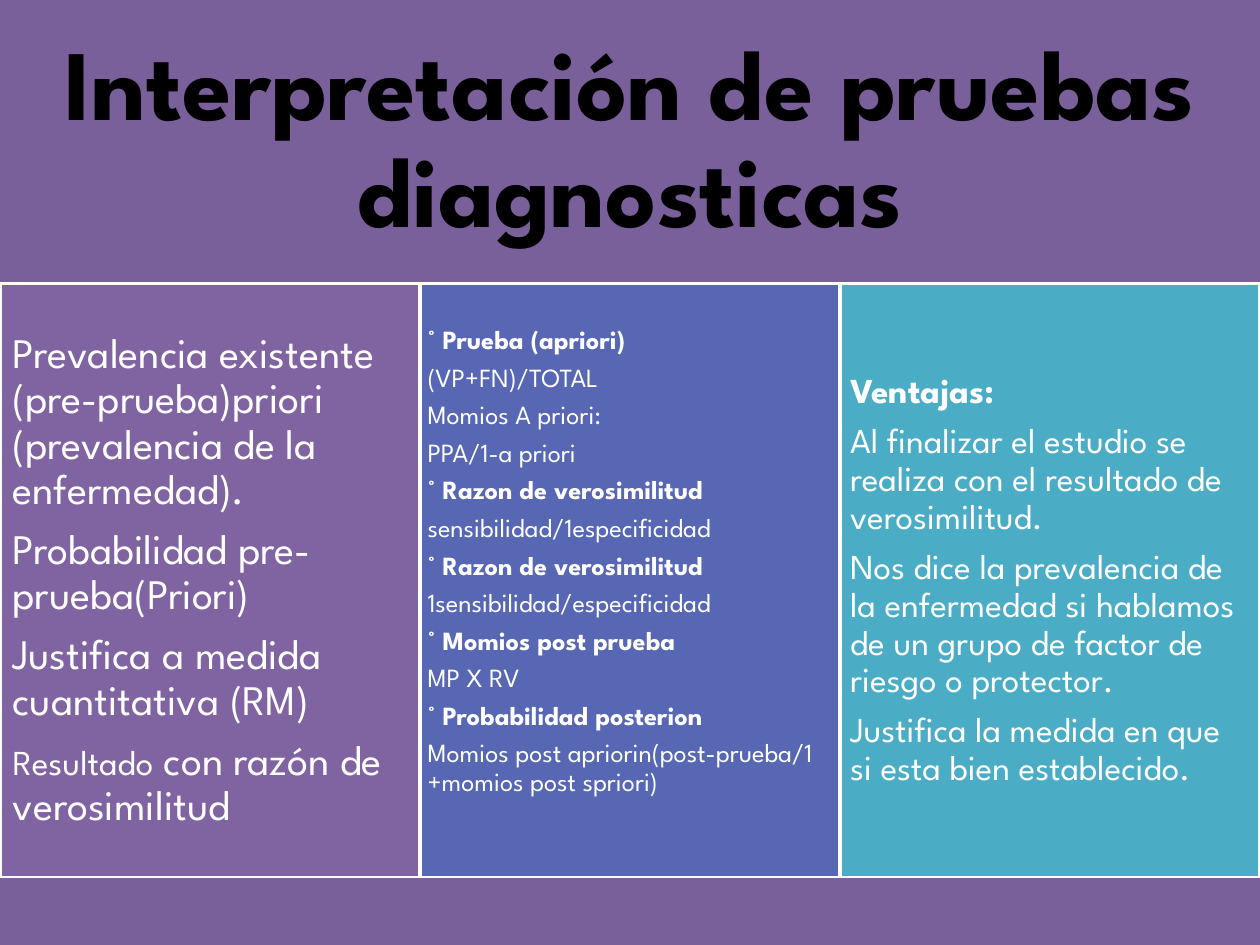
from dataclasses import dataclass

from pptx import Presentation
from pptx import util as u
from pptx.dml.color import RGBColor
from pptx.enum import shapes, text
from pptx.oxml.ns import qn


@dataclass(frozen=True)
class Theme:
    font: str = "League Spartan"
    band: str = "7A609B"
    ink: str = "000000"
    light: str = "FFFFFF"
    purple: str = "8064A2"
    indigo: str = "5767B4"
    aqua: str = "4BACC6"
    head: int = 57
    large: int = 24
    mid: int = 20
    small: int = 15


@dataclass(frozen=True)
class Run:
    text: str
    size: int | None = None
    bold: bool = False


@dataclass(frozen=True)
class Panel:
    fill: str
    size: int
    inset: float
    paras: list[list[Run]]
    foot: float = 0  # extra bottom inset, lifts the centred text


LOOK = Theme()
TOP, HIGH, WIDE = 2.25, 4.72, 10 / 3


def plain(*lines: str) -> list[list[Run]]:
    return [[Run(line)] for line in lines]


def titled(head: str, *lines: str) -> list[list[Run]]:
    return [[Run(head, bold=True)], *plain(*lines)]


PANELS = [
    Panel(LOOK.purple, LOOK.large, 0.1, [
        *plain(
            "Prevalencia existente (pre-prueba)priori (prevalencia de la enfermedad).",
            "Probabilidad pre-prueba(Priori)",
            "Justifica a medida cuantitativa (RM)",
        ),
        [Run("Resultado", LOOK.mid), Run(" con razón de verosimilitud")],
    ]),
    Panel(LOOK.indigo, LOOK.small, 0.06, [
        *titled("° Prueba (apriori)", "(VP+FN)/TOTAL", "Momios A priori:", "PPA/1-a priori"),
        *titled("° Razon de verosimilitud", "sensibilidad/1especificidad"),
        *titled("° Razon de verosimilitud", "1sensibilidad/especificidad"),
        *titled("° Momios post prueba", "MP X RV"),
        *titled("° Probabilidad posterion",
                "Momios post apriorin(post-prueba/1 +momios post spriori)"),
    ], foot=0.3),
    Panel(LOOK.aqua, LOOK.mid, 0.08, titled(
        "Ventajas:",
        "Al finalizar el estudio se realiza con el resultado de verosimilitud.",
        "Nos dice la prevalencia de la enfermedad si hablamos de un grupo de "
        "factor de riesgo o protector.",
        "Justifica la medida en que si esta bien establecido.",
    )),
]


def place(shape, left: float, top: float, width: float, height: float) -> None:
    shape.left, shape.top = u.Inches(left), u.Inches(top)
    shape.width, shape.height = u.Inches(width), u.Inches(height)


def paint(shape, fill: str, line: str | None = None) -> None:
    shape.fill.solid()
    shape.fill.fore_color.rgb = RGBColor.from_string(fill)
    if line:
        shape.line.color.rgb = RGBColor.from_string(line)
        shape.line.width = u.Pt(2)
    else:
        shape.line.fill.background()


def write(shape, paras: list[list[Run]], *, size: int, color: str, inset: float,
          foot: float = 0, align=text.PP_ALIGN.LEFT) -> None:
    """Fill a shape with unbulleted paragraphs, centred vertically."""
    frame = shape.text_frame
    frame.word_wrap = True
    frame.auto_size = text.MSO_AUTO_SIZE.NONE
    frame.vertical_anchor = text.MSO_ANCHOR.MIDDLE
    frame.margin_left = frame.margin_right = frame.margin_top = u.Inches(inset)
    frame.margin_bottom = u.Inches(inset + foot)
    for num, runs in enumerate(paras):
        para = frame.add_paragraph() if num else frame.paragraphs[0]
        para.alignment = align
        para.line_spacing = 0.9
        para.space_before = u.Pt(0)
        para.space_after = u.Pt(0.35 * size)
        props = para._p.get_or_add_pPr()
        props.set("marL", "0")
        props.set("indent", "0")
        props.append(props.makeelement(qn("a:buNone"), {}))
        for item in runs:
            run = para.add_run()
            run.text = item.text
            run.font.name = LOOK.font
            run.font.size = u.Pt(item.size or size)
            run.font.bold = item.bold
            run.font.color.rgb = RGBColor.from_string(color)


def main() -> None:
    deck = Presentation()
    deck.slide_width, deck.slide_height = u.Inches(10), u.Inches(7.5)
    slide = deck.slides.add_slide(deck.slide_layouts.get_by_name("Comparison"))

    title, *bodies = slide.placeholders
    place(title, 0, 0, 10, TOP)
    paint(title, LOOK.band)
    write(title, [[Run("Interpretación de pruebas diagnosticas", bold=True)]],
          size=LOOK.head, color=LOOK.ink, inset=0.24, align=text.PP_ALIGN.CENTER)

    for num, (body, panel) in enumerate(zip(bodies, PANELS)):
        place(body, num * WIDE, TOP, WIDE, HIGH)
        paint(body, panel.fill, LOOK.light)
        write(body, panel.paras, size=panel.size, color=LOOK.light,
              inset=panel.inset, foot=panel.foot)
    for spare in bodies[len(PANELS):]:
        spare.element.getparent().remove(spare.element)

    base = slide.shapes.add_shape(shapes.MSO_SHAPE.RECTANGLE, 0, 0, 0, 0)
    place(base, 0, TOP + HIGH, 10, 7.5 - TOP - HIGH)
    base.shadow.inherit = False
    paint(base, LOOK.band)

    deck.save("out.pptx")


if __name__ == "__main__":
    main()
